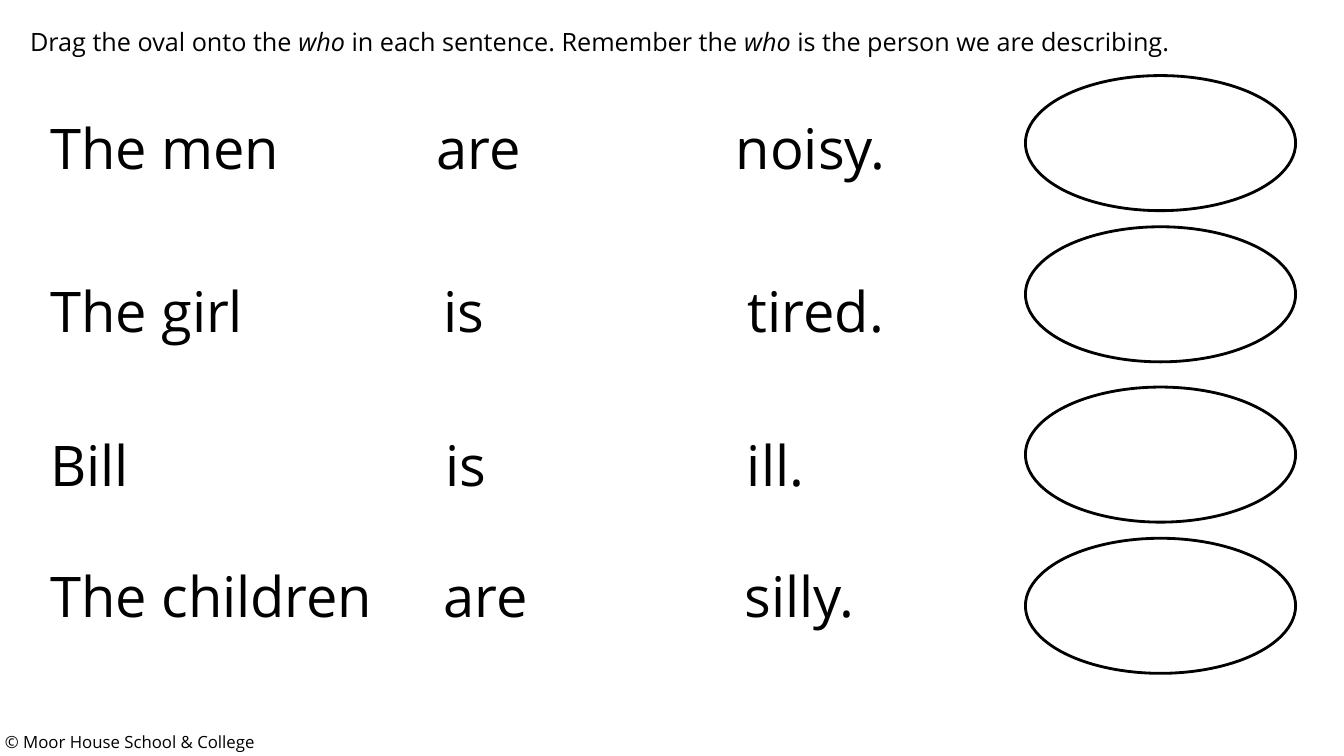
from lxml.etree import SubElement
from pptx import Presentation
from pptx.dml.color import RGBColor
from pptx.enum.shapes import MSO_SHAPE
from pptx.enum.text import MSO_AUTO_SIZE
from pptx.oxml.ns import qn
from pptx.util import Inches, Pt

BLACK = RGBColor(0, 0, 0)
WHITE = RGBColor(255, 255, 255)
FONT = "Open Sans"

COPYRIGHT = [("© Moor House School & College", False)]
INSTRUCTION = [
    ("Drag the oval onto the ", False),
    ("who", True),
    (" in each sentence. Remember the ", False),
    ("who", True),
    (" is the person we are describing.", False),
]
SENTENCES = [
    (("The men", "are", "noisy."), 1.08, (3.83, 6.8)),
    (("The girl", "is", "tired."), 2.69, (3.9, 6.92)),
    (("Bill", "is", "ill."), 4.22, (3.92, 6.91)),
    (("The children", "are", "silly."), 5.52, (3.9, 6.89)),
]
OVAL_TOPS = (0.75, 2.25, 3.84, 5.34)
OVAL_LEFT, OVAL_WIDTH, OVAL_HEIGHT = 10.17, 2.68, 1.34


def add_text(page, spans, place, size, tabs=()):
    box = page.shapes.add_textbox(*map(Inches, place))
    frame = box.text_frame
    frame.word_wrap = True
    frame.auto_size = MSO_AUTO_SIZE.SHAPE_TO_FIT_TEXT
    para = frame.paragraphs[0]
    if tabs:
        stops = SubElement(para._p.get_or_add_pPr(), qn("a:tabLst"))
        for position in tabs:
            SubElement(stops, qn("a:tab"), pos=str(Inches(position)), algn="l")
    for text, italic in spans:
        span = para.add_run()
        span.text = text
        style = {"name": FONT, "size": Pt(size), "italic": italic}
        for name, value in style.items():
            setattr(span.font, name, value)
        span.font.color.rgb = BLACK


def add_oval(page, top):
    place = (OVAL_LEFT, top, OVAL_WIDTH, OVAL_HEIGHT)
    oval = page.shapes.add_shape(MSO_SHAPE.OVAL, *map(Inches, place))
    oval.shadow.inherit = False
    oval.fill.background()
    oval.line.color.rgb = BLACK
    oval.line.width = Pt(2)


def main():
    deck = Presentation()
    deck.slide_width, deck.slide_height = Inches(13.33), Inches(7.5)
    page = deck.slides.add_slide(deck.slide_layouts[6])
    page.background.fill.solid()
    page.background.fill.fore_color.rgb = WHITE

    add_text(page, COPYRIGHT, (-0.05, 7.21, 5.12, 0.3), 12)
    add_text(page, INSTRUCTION, (0.2, 0.21, 13.13, 0.4), 18)
    for words, top, tabs in SENTENCES:
        add_text(page, [("\t".join(words), False)], (0.4, top, 9.4, 0.77), 40, tabs)
    for top in OVAL_TOPS:
        add_oval(page, top)

    deck.save("out.pptx")


if __name__ == "__main__":
    main()
